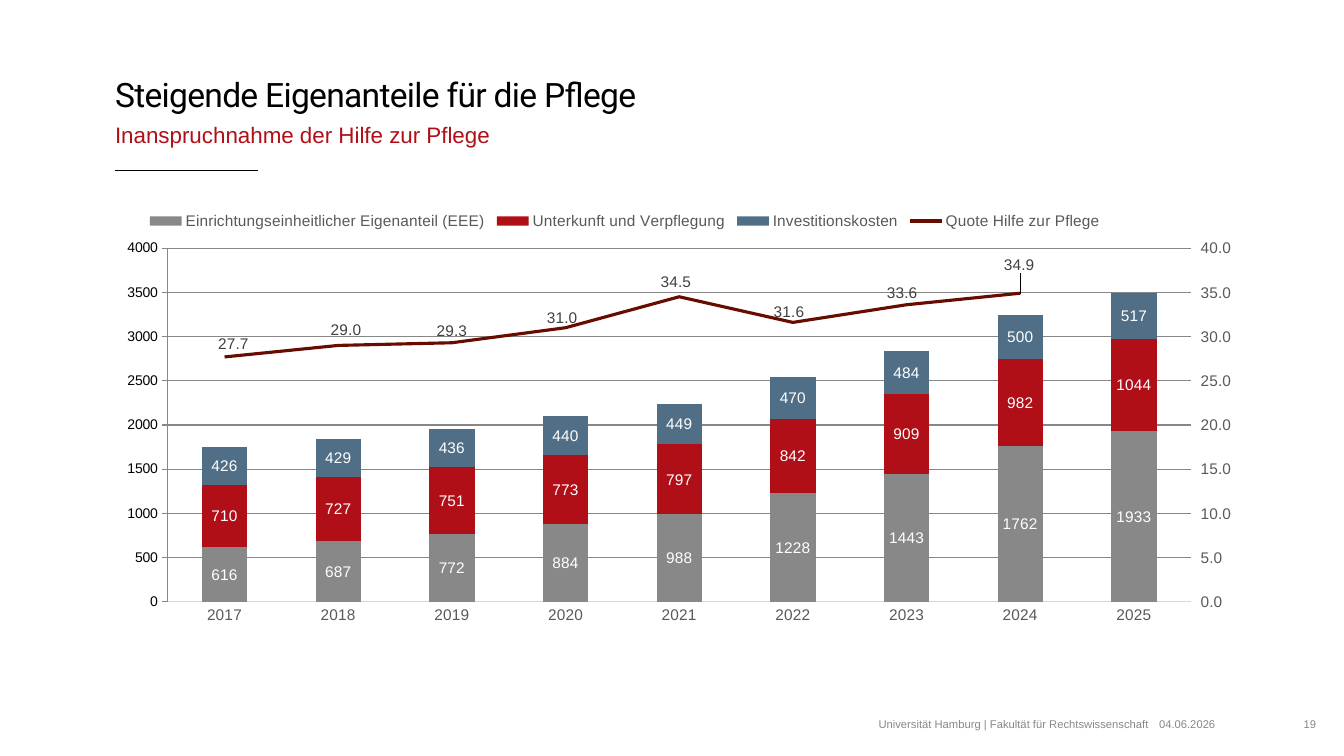
import pptx
import pptx.chart.axis
import pptx.chart.data
import pptx.dml.color
import pptx.enum.chart
import pptx.enum.shapes
import pptx.enum.text
import pptx.oxml
import pptx.oxml.ns
import pptx.util
from dataclasses import dataclass

Cm, Pt = pptx.util.Cm, pptx.util.Pt
ALIGN = pptx.enum.text.PP_ALIGN
ANCHOR = pptx.enum.text.MSO_ANCHOR
TICK = pptx.enum.chart.XL_TICK_MARK
LABEL = pptx.enum.chart.XL_LABEL_POSITION

# Content
TITLE = "Steigende Eigenanteile für die Pflege"
SUBTITLE = "Inanspruchnahme der Hilfe zur Pflege"
FOOTERS = [  # text, left, width, alignment
    ("Universität Hamburg | Fakultät für Rechtswissenschaft", 5.11, 23.85, ALIGN.RIGHT),
    ("04.06.2026", 29.21, 2.62, ALIGN.LEFT),
    ("19", 32.08, 1.09, ALIGN.RIGHT),
]
YEARS = [str(year) for year in range(2017, 2026)]
COSTS = [  # name, colour, euros per year
    ("Einrichtungseinheitlicher Eigenanteil (EEE)", "888888",
     [616, 687, 772, 884, 988, 1228, 1443, 1762, 1933]),
    ("Unterkunft und Verpflegung", "B10F17",
     [710, 727, 751, 773, 797, 842, 909, 982, 1044]),
    ("Investitionskosten", "506F86",
     [426, 429, 436, 440, 449, 470, 484, 500, 517]),
]
QUOTA_NAME = "Quote Hilfe zur Pflege"
QUOTA = [27.7, 29.0, 29.3, 31.0, 34.5, 31.6, 33.6, 34.9, None]
# Shift of each quota label, as hundredths of the chart's width and height
QUOTA_SHIFTS = [(0.8, 0), (0.7, -0.7), (0, 0.2), (-0.3, 0.7),
                (-0.3, -0.5), (-0.35, 0.5), (-0.4, 0.2), (-0.1, -3.5)]


@dataclass
class Theme:
    heading: str = "Roboto"
    body: str = "Arial"
    black: str = "000000"
    red: str = "B10F17"
    line: str = "680C00"
    footer: str = "888888"
    axis: str = "595959"
    grid: str = "D9D9D9"
    label: str = "404040"
    white: str = "FFFFFF"
    title_size: float = 24
    subtitle_size: float = 16
    footer_size: float = 8
    chart_size: float = 11
    value_size: float = 10.5


theme = Theme()
LEFT, WIDTH = 2.9, 30.28


def rgb(colour):
    return pptx.dml.color.RGBColor.from_string(colour)


def set_font(font, size, colour, name=theme.body):
    font.size, font.name, font.bold = Pt(size), name, False
    font.color.rgb = rgb(colour)


def set_line(line, colour, width):
    line.color.rgb = rgb(colour)
    line.width = Pt(width)


def fill_text(box, text, area, size, colour, anchor, align=ALIGN.LEFT, name=theme.body):
    box.left, box.top, box.width, box.height = (Cm(length) for length in area)
    frame = box.text_frame
    frame.text = text
    frame.word_wrap = True
    frame.auto_size = pptx.enum.text.MSO_AUTO_SIZE.NONE
    frame.vertical_anchor = anchor
    frame.margin_left = frame.margin_right = frame.margin_top = frame.margin_bottom = 0
    para = frame.paragraphs[0]
    para.alignment = align
    set_font(para.runs[0].font, size, colour, name)
    return para


def chart_xml(tag, content):
    namespace = pptx.oxml.ns.nsdecls("c")
    return pptx.oxml.parse_xml(f"<c:{tag} {namespace}>{content}</c:{tag}>")


def layout_xml(x, y, size=None, inner=False):
    parts = '<c:layoutTarget val="inner"/>' if inner else ""
    if size:
        parts += '<c:xMode val="edge"/><c:yMode val="edge"/>'
    parts += f'<c:x val="{x}"/><c:y val="{y}"/>'
    if size:
        parts += f'<c:w val="{size[0]}"/><c:h val="{size[1]}"/>'
    return chart_xml("layout", f"<c:manualLayout>{parts}</c:manualLayout>")


def remove_all(parent, query):
    for element in parent.xpath(query):
        parent.remove(element)


deck = pptx.Presentation()
deck.slide_width, deck.slide_height = Cm(33.87), Cm(19.05)
page = deck.slides.add_slide(deck.slide_layouts[5])

# Heading
para = fill_text(page.shapes.title, TITLE, (LEFT, 0.71, WIDTH, 2.16), theme.title_size,
                 theme.black, ANCHOR.BOTTOM, name=theme.heading)
para.line_spacing = 1.1
para.runs[0].font._element.set("spc", "-50")
box = page.shapes.add_textbox(0, 0, 0, 0)
para = fill_text(box, SUBTITLE, (LEFT, 3, WIDTH, 0.71), theme.subtitle_size,
                 theme.red, ANCHOR.MIDDLE)
para.line_spacing, para.space_after = 1.1, Pt(7)

rule = page.shapes.add_connector(pptx.enum.shapes.MSO_CONNECTOR.STRAIGHT,
                                 Cm(LEFT), Cm(4.29), Cm(6.5), Cm(4.29))
set_line(rule.line, theme.black, 0.5)
rule._element.spPr.append(pptx.oxml.parse_xml(
    f"<a:effectLst {pptx.oxml.ns.nsdecls('a')}/>"))

# Footer
for text, left, width, align in FOOTERS:
    box = page.shapes.add_textbox(0, 0, 0, 0)
    fill_text(box, text, (left, 17.7, width, 0.71), theme.footer_size,
              theme.footer, ANCHOR.BOTTOM, align)

# Chart with all series as stacked columns
data = pptx.chart.data.CategoryChartData(number_format="0")
data.categories = YEARS
for name, _, values in COSTS:
    data.add_series(name, values)
data.add_series(QUOTA_NAME, QUOTA, number_format="0.0")
chart = page.shapes.add_chart(pptx.enum.chart.XL_CHART_TYPE.COLUMN_STACKED,
                              Cm(LEFT), Cm(5), Cm(28.24), Cm(11.4), data).chart
chart.has_title = False
set_font(chart.font, 10, theme.black)

# Quota moves to a line on a second axis
plot_area = chart.element.xpath("c:chart/c:plotArea")[0]
columns = plot_area.xpath("c:barChart")[0]
quota_ser = columns.xpath("c:ser")[-1]
remove_all(quota_ser, "c:invertIfNegative")
line_chart = chart_xml("lineChart", '<c:grouping val="standard"/><c:varyColors val="0"/>'
                       '<c:marker val="1"/><c:axId val="501"/><c:axId val="502"/>')
line_chart.insert(2, quota_ser)
columns.addnext(line_chart)
hidden_axis = chart_xml("catAx", '<c:axId val="501"/><c:scaling/><c:delete val="1"/>'
                        '<c:axPos val="b"/><c:crossAx val="502"/>')
right_axis = chart_xml("valAx", '<c:axId val="502"/><c:scaling/><c:delete val="0"/>'
                       '<c:axPos val="r"/><c:numFmt formatCode="0.0" sourceLinked="0"/>'
                       '<c:tickLblPos val="nextTo"/><c:crossAx val="501"/><c:crosses val="max"/>')
plot_area.xpath("c:valAx")[-1].addnext(hidden_axis)
hidden_axis.addnext(right_axis)
remove_all(plot_area, "c:layout")
plot_area.insert(0, layout_xml(0.047, 0.11, (0.913, 0.782), inner=True))

# Axes
years = chart.category_axis
years.major_tick_mark = TICK.NONE
set_font(years.tick_labels.font, theme.chart_size, theme.axis)
set_line(years.format.line, theme.grid, 0.75)
quota_axis = pptx.chart.axis.ValueAxis(right_axis)
for axis, top, step, size, tick in [
        (chart.value_axis, 3500, 500, theme.value_size, TICK.NONE),
        (quota_axis, 40, 5, theme.chart_size, TICK.OUTSIDE)]:
    axis.minimum_scale, axis.maximum_scale, axis.major_unit = 0, top, step
    axis.major_tick_mark, axis.minor_tick_mark = tick, TICK.NONE
    set_font(axis.tick_labels.font, size, theme.axis)
    axis.format.line.fill.background()
set_line(chart.value_axis.major_gridlines.format.line, theme.grid, 0.75)

# Columns
stack, line_plot = chart.plots
stack.gap_width, stack.overlap, stack.vary_by_categories = 150, 100, False
for series, (_, colour, _) in zip(stack.series, COSTS):
    series.format.fill.solid()
    series.format.fill.fore_color.rgb = rgb(colour)
    series.data_labels.show_value = True
    series.data_labels.position = LABEL.CENTER
    set_font(series.data_labels.font, theme.chart_size, theme.white)

# Line
quota = line_plot.series[0]
quota.smooth = False
quota.marker.style = pptx.enum.chart.XL_MARKER_STYLE.NONE
set_line(quota.format.line, theme.line, 2.25)
quota.data_labels.show_value = True
quota.data_labels.position = LABEL.ABOVE
set_font(quota.data_labels.font, theme.chart_size, theme.label)
for index, (x, y) in enumerate(QUOTA_SHIFTS):
    label = quota.points[index].data_label
    label.position = LABEL.ABOVE
    set_font(label.font, theme.chart_size, theme.label)
    mark = quota_ser.xpath(f"c:dLbls/c:dLbl/c:idx[@val='{index}']")[0]
    mark.addnext(layout_xml(x / 100, y / 100))

# Legend
chart.has_legend = True
chart.legend.position = pptx.enum.chart.XL_LEGEND_POSITION.TOP
chart.legend.include_in_layout = False
set_font(chart.legend.font, theme.chart_size, theme.axis)
legend = chart.element.xpath("c:chart/c:legend")[0]
remove_all(legend, "c:layout")
legend.xpath("c:legendPos")[0].addnext(layout_xml(0.025, 0.02, (0.86, 0.06)))

deck.save("out.pptx")
